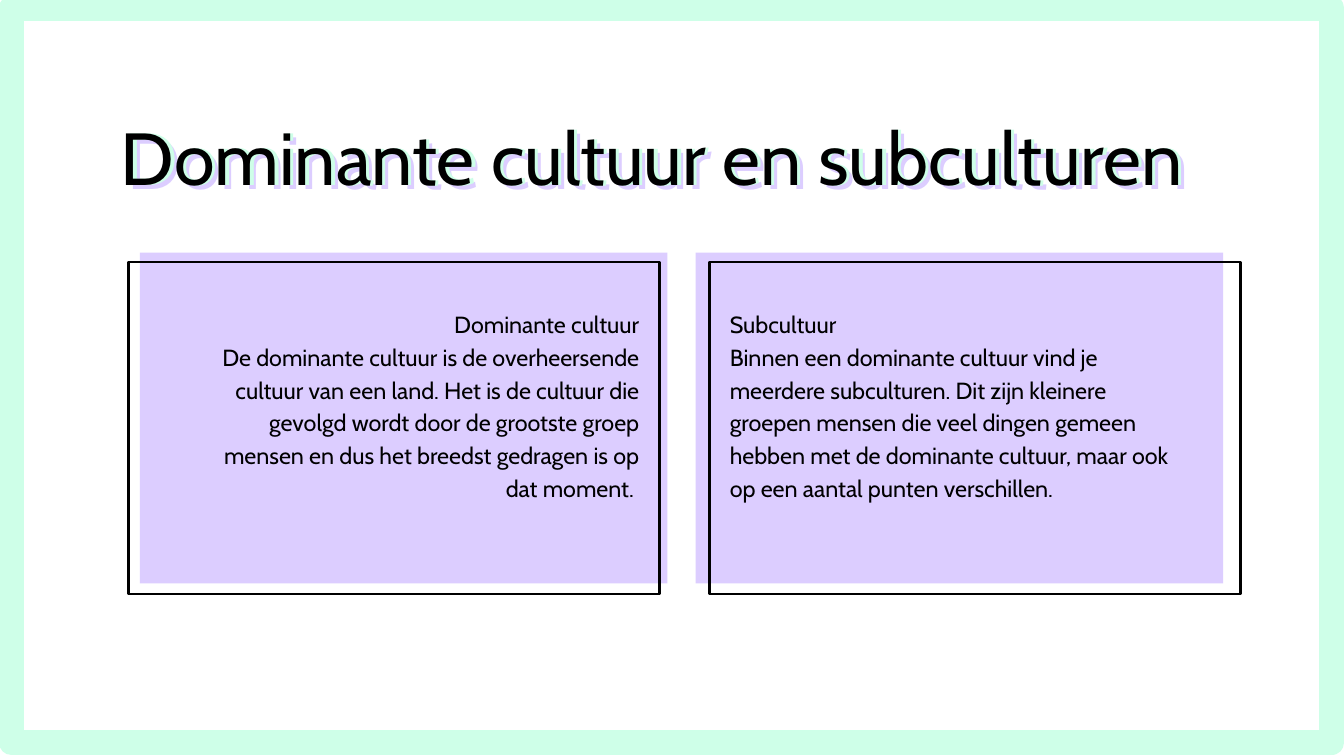
from dataclasses import dataclass
from typing import Optional

import pptx
import pptx.dml.color
import pptx.enum.shapes
import pptx.enum.text
import pptx.util

Inches = pptx.util.Inches
Pt = pptx.util.Pt
RGBColor = pptx.dml.color.RGBColor
Align = pptx.enum.text.PP_ALIGN

BLACK = RGBColor(0x00, 0x00, 0x00)
LILAC = RGBColor(0xDC, 0xCD, 0xFF)
MINT = RGBColor(0xCE, 0xFF, 0xE8)
FONT = "Cabin"
TITLE = "Dominante cultuur en subculturen"


@dataclass(frozen=True)
class Box:
    left: float
    top: float
    width: float
    height: float

    def lengths(self) -> tuple:
        return tuple(Inches(v) for v in (self.left, self.top, self.width, self.height))


@dataclass(frozen=True)
class Card:
    panel_left: float
    outline_left: float
    text_left: float
    align: Align
    heading: str
    body: str


CARDS = (
    Card(2.08, 1.91, 2.89, Align.RIGHT, "Dominante cultuur",
         "De dominante cultuur is de overheersende cultuur van een land. "
         "Het is de cultuur die gevolgd wordt door de grootste groep mensen "
         "en dus het breedst gedragen is op dat moment. "),
    Card(10.35, 10.56, 10.86, Align.LEFT, "Subcultuur",
         "Binnen een dominante cultuur vind je meerdere subculturen. "
         "Dit zijn kleinere groepen mensen die veel dingen gemeen hebben "
         "met de dominante cultuur, maar ook op een aantal punten verschillen."),
)


def add_rectangle(slide, box: Box, fill: Optional[RGBColor] = None,
                  line: Optional[RGBColor] = None, line_width: float = 0) -> None:
    rectangle = slide.shapes.add_shape(pptx.enum.shapes.MSO_SHAPE.RECTANGLE, *box.lengths())
    rectangle.shadow.inherit = False
    if fill is None:
        rectangle.fill.background()
    else:
        rectangle.fill.solid()
        rectangle.fill.fore_color.rgb = fill
    if line is None:
        rectangle.line.fill.background()
    else:
        rectangle.line.color.rgb = line
        rectangle.line.width = Pt(line_width)


def write(frame, lines: tuple, size: float, spacing: float, color: RGBColor,
          align: Align = Align.LEFT) -> None:
    frame.margin_left = frame.margin_right = frame.margin_top = frame.margin_bottom = 0
    frame.word_wrap = True
    frame.auto_size = pptx.enum.text.MSO_AUTO_SIZE.NONE
    frame.vertical_anchor = pptx.enum.text.MSO_ANCHOR.TOP
    frame.text = "\n".join(lines)
    for paragraph in frame.paragraphs:
        paragraph.alignment = align
        paragraph.line_spacing = Pt(spacing)
        paragraph.font.name = FONT
        paragraph.font.size = Pt(size)
        paragraph.font.color.rgb = color


def add_title(slide) -> None:
    for left, top, color in ((1.89, 1.73, LILAC), (1.85, 1.67, MINT)):
        echo = slide.shapes.add_textbox(*Box(left, top, 18.28, 1.31).lengths())
        write(echo.text_frame, (TITLE,), 79, 94.8, color)
    title = slide.shapes.title
    title.left, title.top, title.width, title.height = Box(1.8, 1.67, 18.28, 1.31).lengths()
    write(title.text_frame, (TITLE,), 79, 94.8, BLACK)
    slide.shapes.element.append(title.element)


def add_card(slide, card: Card) -> None:
    add_rectangle(slide, Box(card.panel_left, 3.76, 7.85, 4.92), fill=LILAC)
    text = slide.shapes.add_textbox(*Box(card.text_left, 4.55, 6.62, 3.5).lengths())
    write(text.text_frame, (card.heading, card.body), 25, 35, BLACK, card.align)
    add_rectangle(slide, Box(card.outline_left, 3.9, 7.9, 4.94), line=BLACK, line_width=3)


def main() -> None:
    presentation = pptx.Presentation()
    presentation.slide_width = Inches(20)
    presentation.slide_height = Inches(11.25)
    slide = presentation.slides.add_slide(presentation.slide_layouts[5])
    add_title(slide)
    for card in CARDS:
        add_card(slide, card)
    add_rectangle(slide, Box(0.17, 0.12, 19.65, 10.93), line=MINT, line_width=27)
    presentation.save("out.pptx")


if __name__ == "__main__":
    main()
